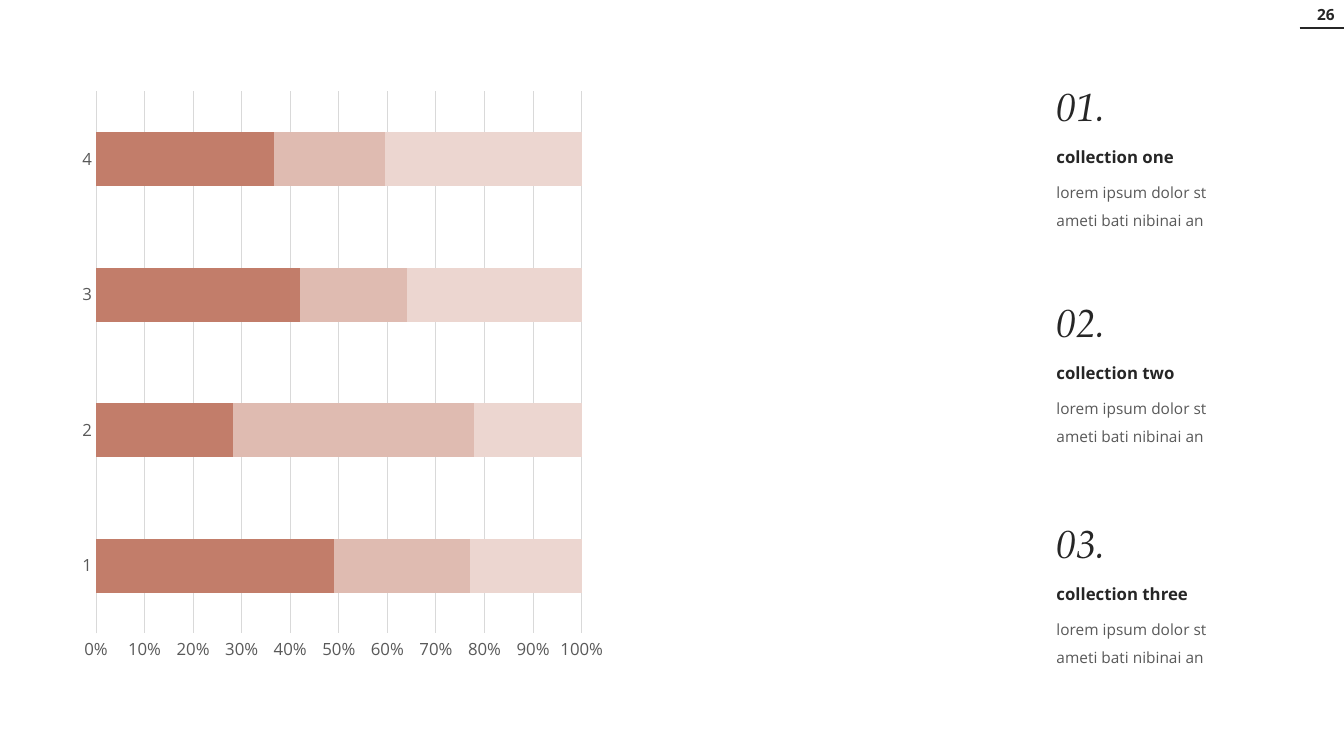
from lxml import etree
from pptx import Presentation
from pptx.chart.data import CategoryChartData
from pptx.dml.color import RGBColor
from pptx.enum.chart import XL_CHART_TYPE, XL_TICK_MARK
from pptx.enum.text import MSO_AUTO_SIZE, PP_ALIGN
from pptx.oxml.ns import qn
from pptx.util import Inches, Pt

BAR_STACKED_100 = XL_CHART_TYPE.BAR_STACKED_100
NO_TICKS = XL_TICK_MARK.NONE
FIT_SHAPE = MSO_AUTO_SIZE.SHAPE_TO_FIT_TEXT
LEFT, CENTER = PP_ALIGN.LEFT, PP_ALIGN.CENTER

SANS, SERIF = "Open Sans", "TeX Gyre Pagella"
COLORS = {
    "background": "FFFFFF",
    "ink": "262626",
    "muted": "595959",
    "grid": "D9D9D9",
    "chart text": "000000",
    "Series 1": "C27D6A",
    "Series 2": "DFBBB1",
    "Series 3": "ECD6D0",
}
SERIES = {
    "Series 1": (49, 28, 42, 37),
    "Series 2": (28, 49, 22, 23),
    "Series 3": (23, 22, 36, 41),
}
COLLECTIONS = [(0.77, "one", 1.43), (2.91, "two", 1.43), (5.1, "three", 1.59)]
TEXT_LEFT = 10.38


def style_font(font, size, color, name=SANS, bold=False, italic=False):
    font.size = Pt(size)
    font.color.rgb = RGBColor.from_string(COLORS[color])
    font.name = name
    font.bold = bold
    font.italic = italic


def add_text(box, text, size, color, spacing=1.0, align=LEFT, wrap=True, **style):
    """Add a one-paragraph text box; box is left, top, width, height in inches."""
    frame = slide.shapes.add_textbox(*map(Inches, box)).text_frame
    frame.word_wrap = wrap
    frame.auto_size = FIT_SHAPE
    paragraph = frame.paragraphs[0]
    paragraph.alignment = align
    paragraph.line_spacing = spacing
    run = paragraph.add_run()
    run.text = text
    style_font(run.font, size, color, **style)


presentation = Presentation()
presentation.slide_width = Inches(13.33)
presentation.slide_height = Inches(7.5)
slide = presentation.slides.add_slide(presentation.slide_layouts[6])
slide.background.fill.solid()
slide.background.fill.fore_color.rgb = RGBColor.from_string(COLORS["background"])

# Stacked bar chart
chart_data = CategoryChartData()
chart_data.categories = ["1", "2", "3", "4"]
for name, values in SERIES.items():
    chart_data.add_series(name, values)
chart = slide.shapes.add_chart(
    BAR_STACKED_100, Inches(0.71), Inches(0.79), Inches(5.38), Inches(5.88), chart_data
).chart
chart.has_legend = False
chart.has_title = False
style_font(chart.font, 10, "chart text")

plot = chart.plots[0]
plot.gap_width = 150
plot.overlap = 100
plot.vary_by_categories = False
for series in plot.series:
    series.format.fill.solid()
    series.format.fill.fore_color.rgb = RGBColor.from_string(COLORS[series.name])

category_axis, value_axis = chart.category_axis, chart.value_axis
for axis in (category_axis, value_axis):
    axis.major_tick_mark = NO_TICKS
    axis.minor_tick_mark = NO_TICKS
    style_font(axis.tick_labels.font, 12, "muted")
category_axis.has_major_gridlines = False
value_axis.has_major_gridlines = True
value_axis.format.line.fill.background()
value_axis.tick_labels.number_format = "0%"
value_axis.tick_labels.number_format_is_linked = False
for line in (category_axis.format.line, value_axis.major_gridlines.format.line):
    line.color.rgb = RGBColor.from_string(COLORS["grid"])
    line.width = Pt(0.75)

# Numbered collections
for number, (top, name, heading_width) in enumerate(COLLECTIONS, start=1):
    add_text((TEXT_LEFT, top, 0.88, 0.57), f"{number:02}.", 28, "ink",
             name=SERIF, italic=True)
    add_text((TEXT_LEFT, top + 0.54, heading_width, 0.4), f"collection {name}", 12, "ink",
             spacing=1.5, bold=True)
    add_text((TEXT_LEFT, top + 0.91, 1.79, 0.66),
             "lorem ipsum dolor st ameti bati nibinai an", 11, "muted", spacing=1.5)

# Page number and its rule
add_text((12.96, 0, 0.38, 0.29), "26", 11, "ink", align=CENTER, wrap=False, bold=True)
page_rule = slide.shapes.add_connector(
    1, Inches(12.89), Inches(0.28), presentation.slide_width, Inches(0.28)
)
page_rule.line.color.rgb = RGBColor.from_string(COLORS["ink"])
page_rule.line.width = Pt(1.5)
etree.SubElement(page_rule.element.spPr, qn("a:effectLst"))

presentation.save("out.pptx")
